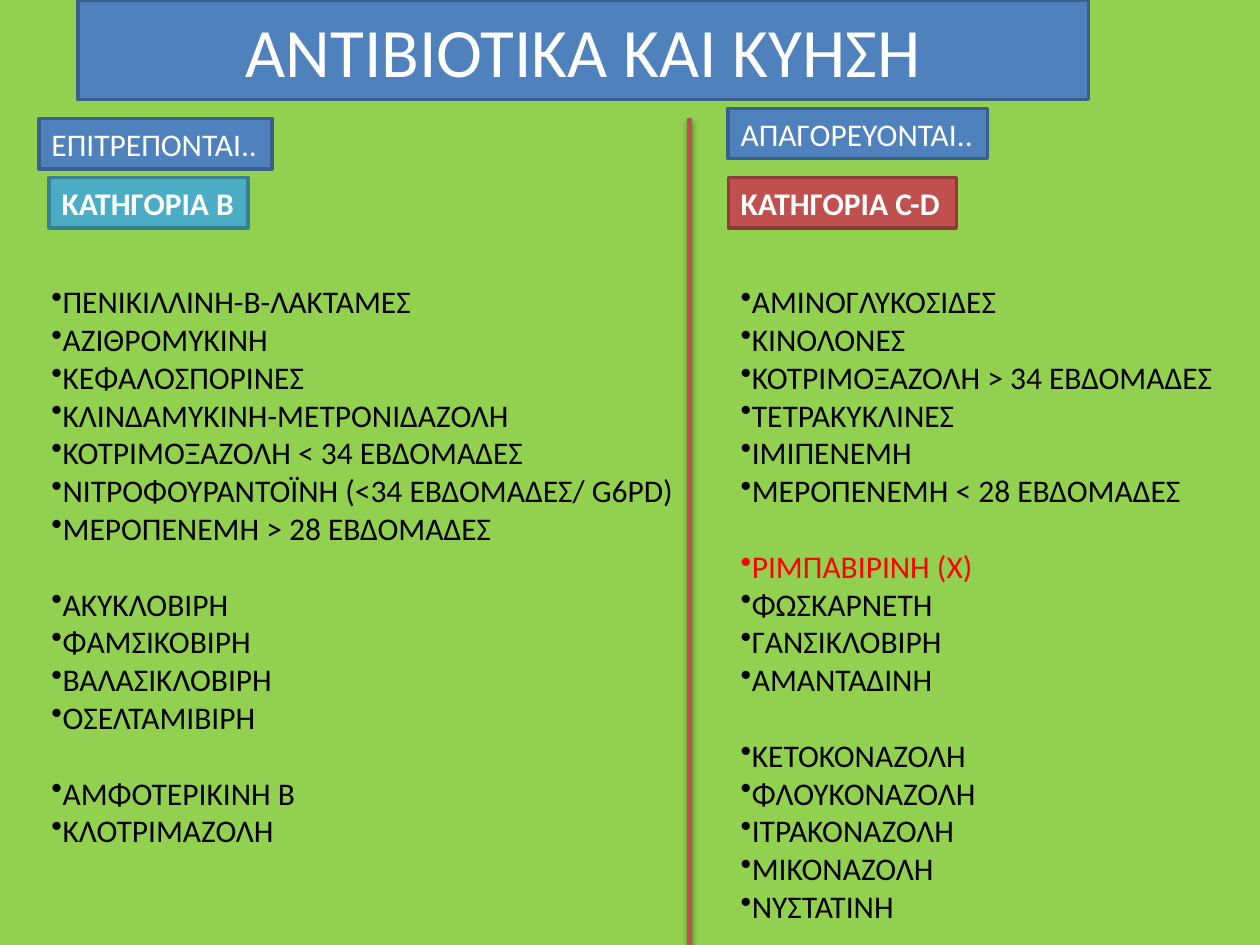
from dataclasses import dataclass

from lxml import etree
from pptx import Presentation
from pptx import util as u
from pptx.dml.color import RGBColor
from pptx.enum import shapes, text
from pptx.oxml.ns import qn

HUES = {
    "back": "92D050", "blue": "4F81BD", "navy": "3A5F8C",
    "aqua": "4BACC6", "teal": "377F92", "red": "C0504D",
    "wine": "8E3B39", "white": "FFFFFF", "black": "000000",
    "alert": "FF0000",
}
LINE = 21.6  # height of one 18 pt line, in points


@dataclass
class Label:
    words: str
    box: tuple[float, float, float, float]
    fill: str = "blue"
    edge: str = "navy"
    size: float = 18
    bold: bool = False
    title: bool = False


@dataclass
class Drugs:
    box: tuple[float, float, float, float]
    groups: list[list[str]]
    alert: str = ""


LABELS = [
    Label("ANTIBIOTIKA KAI KYΗΣΗ", (0.62, 0, 8.02, 0.79), size=39.6, title=True),
    Label("ΚΑΤΗΓΟΡΙΑ Β", (0.39, 1.41, 1.58, 0.4), "aqua", "teal", bold=True),
    Label("ΚΑΤΗΓΟΡΙΑ C-D", (5.78, 1.41, 1.81, 0.4), "red", "wine", bold=True),
    Label("ΕΠΙΤΡΕΠΟΝΤΑΙ..", (0.31, 0.94, 1.85, 0.4)),
    Label("ΑΠΑΓΟΡΕΥΟΝΤΑΙ..", (5.78, 0.86, 2.06, 0.4)),
]

LISTS = [
    Drugs((0.31, 2.19, 5.18, 4.95), [
        ["ΠΕΝΙΚΙΛΛΙΝΗ-Β-ΛΑΚΤΑΜΕΣ", "ΑΖΙΘΡΟΜΥΚΙΝΗ", "ΚΕΦΑΛΟΣΠΟΡΙΝΕΣ",
         "ΚΛΙΝΔΑΜΥΚΙΝΗ-METΡΟΝΙΔΑΖΟΛΗ", "ΚΟΤΡΙΜΟΞΑΖΟΛΗ < 34 ΕΒΔΟΜΑΔΕΣ",
         "ΝΙΤΡΟΦΟΥΡΑΝΤΟΪΝΗ (<34 ΕΒΔΟΜΑΔΕΣ/ G6PD)",
         "ΜΕΡΟΠΕΝΕΜΗ > 28 ΕΒΔΟΜΑΔΕΣ"],
        ["ΑΚΥΚΛΟΒΙΡΗ", "ΦΑΜΣΙΚΟΒΙΡΗ", "ΒΑΛΑΣΙΚΛΟΒΙΡΗ", "ΟΣΕΛΤΑΜΙΒΙΡΗ"],
        ["ΑΜΦΟΤΕΡΙΚΙΝΗ Β", "ΚΛΟΤΡΙΜΑΖΟΛΗ"],
    ]),
    Drugs((5.78, 2.19, 3.98, 5.55), [
        ["ΑΜΙΝΟΓΛΥΚΟΣΙΔΕΣ", "ΚΙΝΟΛΟΝΕΣ", "ΚΟΤΡΙΜΟΞΑΖΟΛΗ > 34 ΕΒΔΟΜΑΔΕΣ",
         "ΤΕΤΡΑΚΥΚΛΙΝΕΣ", "ΙΜΙΠΕΝΕΜΗ", "ΜΕΡΟΠΕΝΕΜΗ < 28 ΕΒΔΟΜΑΔΕΣ"],
        ["ΡΙΜΠΑΒΙΡΙΝΗ (Χ)", "ΦΩΣΚΑΡΝΕΤΗ", "ΓΑΝΣΙΚΛΟΒΙΡΗ", "ΑΜΑΝΤΑΔΙΝΗ"],
        ["ΚΕΤΟΚΟΝΑΖΟΛΗ", "ΦΛΟΥΚΟΝΑΖΟΛΗ", "ΙΤΡΑΚΟΝΑΖΟΛΗ", "ΜΙΚΟΝΑΖΟΛΗ",
         "ΝΥΣΤΑΤΙΝΗ"],
    ], alert="ΡΙΜΠΑΒΙΡΙΝΗ (Χ)"),
]


def tint(name: str) -> RGBColor:
    return RGBColor.from_string(HUES[name])


def apply(item, form: dict) -> None:
    for key, value in form.items():
        setattr(item, key, value)


def write(para, words: str, hue: str, size: float = 18, bold: bool = False) -> None:
    run = para.add_run()
    run.text = words
    apply(run.font, {"name": "Calibri", "size": u.Pt(size), "bold": bold})
    run.font.color.rgb = tint(hue)


def fit(frame) -> None:
    """Let the frame grow around unwrapped lines."""
    apply(frame, {"word_wrap": False,
                  "auto_size": text.MSO_AUTO_SIZE.SHAPE_TO_FIT_TEXT})


def add_label(slide, label: Label) -> None:
    shape = slide.shapes.add_shape(shapes.MSO_SHAPE.RECTANGLE,
                                   *map(u.Inches, label.box))
    shape.shadow.inherit = False
    shape.fill.solid()
    shape.fill.fore_color.rgb = tint(label.fill)
    shape.line.color.rgb = tint(label.edge)
    shape.line.width = u.Pt(2)
    frame = shape.text_frame
    frame.vertical_anchor = text.MSO_ANCHOR.MIDDLE
    if not label.title:
        fit(frame)
    para = frame.paragraphs[0]
    para.alignment = text.PP_ALIGN.CENTER if label.title else text.PP_ALIGN.LEFT
    write(para, label.words, "white", label.size, label.bold)


def add_list(slide, drugs: Drugs) -> None:
    """Draw bulleted groups, one line height apart."""
    frame = slide.shapes.add_textbox(*map(u.Inches, drugs.box)).text_frame
    fit(frame)
    para = frame.paragraphs[0]
    for rank, group in enumerate(drugs.groups):
        for row, name in enumerate(group):
            if rank or row:
                para = frame.add_paragraph()
            if rank and not row:
                para.space_before = u.Pt(LINE)
            mark = etree.SubElement(para._p.get_or_add_pPr(), qn("a:buChar"))
            mark.set("char", "•")
            write(para, name, "alert" if name == drugs.alert else "black")


def add_rule(slide, x: float, top: float, end: float) -> None:
    """Draw the upright divider with its soft shadow."""
    rule = slide.shapes.add_connector(shapes.MSO_CONNECTOR.STRAIGHT,
                                      *map(u.Inches, (x, top, x, end)))
    rule.line.color.rgb = tint("red")
    rule.line.width = u.Pt(3)
    node = rule._element.spPr
    for tag, form in (
        ("effectLst", {}),
        ("outerShdw", {"blurRad": u.Pt(3.1), "dist": u.Pt(1.8),
                       "dir": 90 * 60000, "rotWithShape": 0}),
        ("srgbClr", {"val": HUES["black"]}),
        ("alpha", {"val": 35000}),
    ):
        node = etree.SubElement(node, qn(f"a:{tag}"))
        for key, value in form.items():
            node.set(key, str(value))


def main() -> None:
    deck = Presentation()
    apply(deck, {"slide_width": u.Inches(10), "slide_height": u.Inches(7.5)})
    slide = deck.slides.add_slide(deck.slide_layouts[6])
    slide.background.fill.solid()
    slide.background.fill.fore_color.rgb = tint("back")
    add_rule(slide, 5.47, 0.94, 7.5)
    for label in LABELS:
        add_label(slide, label)
    for drugs in LISTS:
        add_list(slide, drugs)
    deck.save("out.pptx")


if __name__ == "__main__":
    main()
